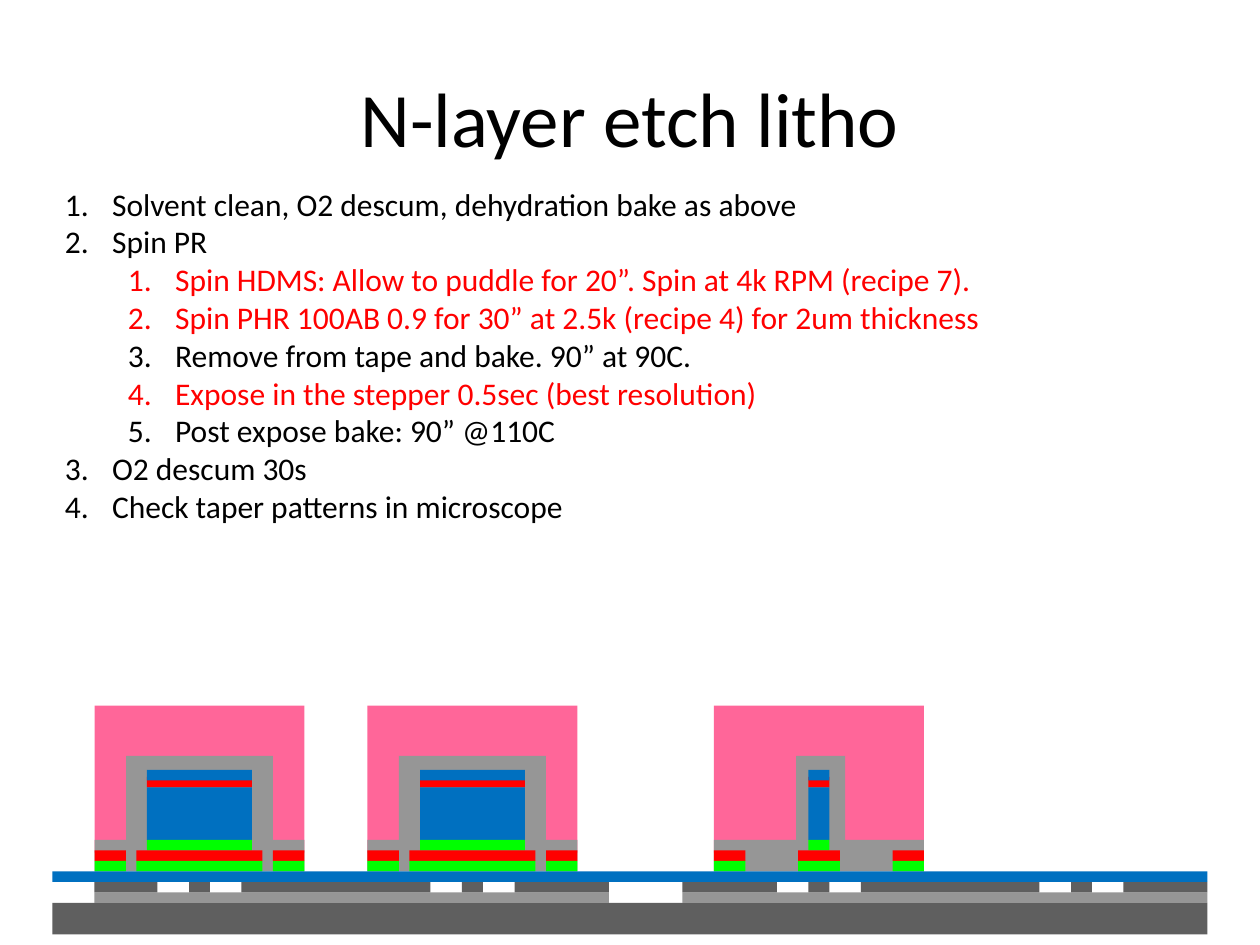
from dataclasses import dataclass

from lxml.etree import SubElement
from pptx import Presentation
from pptx.dml.color import RGBColor
from pptx.enum.shapes import MSO_SHAPE
from pptx.enum.text import MSO_ANCHOR, PP_ALIGN
from pptx.oxml.ns import qn
from pptx.slide import Slide
from pptx.text.text import TextFrame, _Paragraph
from pptx.util import Pt

BLACK = RGBColor(0x00, 0x00, 0x00)
RED = RGBColor(0xFF, 0x00, 0x00)
GREEN = RGBColor(0x00, 0xFF, 0x00)
BLUE = RGBColor(0x00, 0x70, 0xC0)
PINK = RGBColor(0xFF, 0x66, 0x99)
GRAY = RGBColor(0x96, 0x96, 0x96)
DARK_GRAY = RGBColor(0x5F, 0x5F, 0x5F)

FONT = "Calibri"
LAYER = 6
DEVICE_WIDTH = 120
PAD_WIDTH = 18
NUMBER_INDENT = 27
LEVEL_INDENT = 36


@dataclass(frozen=True)
class Device:
    left: float
    mesa_width: float
    contact_width: float
    cladding_width: float
    cladding_shift: float = 0


@dataclass(frozen=True)
class Step:
    text: str
    level: int = 0
    color: RGBColor = BLACK


@dataclass(frozen=True)
class Strip:
    left: float
    width: float


DEVICES = [
    Device(54, 60, 72, 84),
    Device(210, 60, 72, 84),
    Device(408, 12, 24, 28, cladding_shift=1),
]

STEPS = [
    Step("Solvent clean, O2 descum, dehydration bake as above"),
    Step("Spin PR"),
    Step("Spin HDMS: Allow to puddle for 20”. Spin at 4k RPM (recipe 7).", 1, RED),
    Step("Spin PHR 100AB 0.9 for 30” at 2.5k (recipe 4) for 2um thickness", 1, RED),
    Step("Remove from tape and bake. 90” at 90C.", 1),
    Step("Expose in the stepper 0.5sec (best resolution)", 1, RED),
    Step("Post expose bake: 90” @110C", 1),
    Step("O2 descum 30s"),
    Step("Check taper patterns in microscope"),
]

WAFER = Strip(30, 660)
OXIDE = [Strip(54, 294), Strip(390, 300)]
WAVEGUIDES = [
    Strip(54, 36), Strip(108, 12), Strip(138, 108), Strip(264, 12), Strip(294, 54),
    Strip(390, 54), Strip(462, 12), Strip(492, 102), Strip(612, 12), Strip(642, 48),
]


def add_layer(page: Slide, left: float, top: float, width: float,
              height: float, color: RGBColor) -> None:
    box = page.shapes.add_shape(
        MSO_SHAPE.RECTANGLE, Pt(left), Pt(top), Pt(width), Pt(height))
    box.shadow.inherit = False
    box.fill.solid()
    box.fill.fore_color.rgb = color
    box.line.fill.background()


def add_frame(page: Slide, left: float, top: float, width: float,
              height: float) -> TextFrame:
    box = page.shapes.add_textbox(Pt(left), Pt(top), Pt(width), Pt(height))
    box.text_frame.word_wrap = True
    return box.text_frame


def write(para: _Paragraph, text: str, *, size: float,
          color: RGBColor = BLACK, align: PP_ALIGN = PP_ALIGN.LEFT) -> None:
    para.alignment = align
    span = para.add_run()
    span.text = text
    span.font.name = FONT
    span.font.size = Pt(size)
    span.font.color.rgb = color


def number(para: _Paragraph, level: int) -> None:
    para.level = level
    properties = para._p.get_or_add_pPr()
    properties.set("marL", str(Pt(NUMBER_INDENT + LEVEL_INDENT * level)))
    properties.set("indent", str(-Pt(NUMBER_INDENT)))
    SubElement(properties, qn("a:buFont"), typeface=FONT)
    SubElement(properties, qn("a:buAutoNum"), type="arabicPeriod")


def add_title(page: Slide) -> None:
    frame = add_frame(page, 36, 21.6, 648, 90)
    frame.vertical_anchor = MSO_ANCHOR.MIDDLE
    write(frame.paragraphs[0], "N-layer etch litho", size=44, align=PP_ALIGN.CENTER)


def add_steps(page: Slide) -> None:
    frame = add_frame(page, 30, 102, 570, 204)
    for index, step in enumerate(STEPS):
        para = frame.add_paragraph() if index else frame.paragraphs[0]
        number(para, step.level)
        write(para, step.text, size=18, color=step.color)


def add_device(page: Slide, device: Device) -> None:
    def add_centered(top: float, width: float, height: float,
                     color: RGBColor, shift: float = 0) -> None:
        left = device.left + (DEVICE_WIDTH - width) / 2 + shift
        add_layer(page, left, top, width, height, color)

    add_centered(403.2, DEVICE_WIDTH, 84, PINK)
    add_centered(432, device.cladding_width, 55, GRAY, device.cladding_shift)
    add_centered(480, DEVICE_WIDTH, 18, GRAY)
    add_centered(444, device.mesa_width, LAYER, RED)
    add_centered(450, device.mesa_width, 30, BLUE)
    add_centered(440, device.mesa_width, LAYER, BLUE)
    add_centered(480, device.mesa_width, LAYER, GREEN)
    for top, color in ((486, RED), (492, GREEN)):
        add_centered(top, device.contact_width, LAYER, color)
        for offset in (0, DEVICE_WIDTH - PAD_WIDTH):
            add_layer(page, device.left + offset, top, PAD_WIDTH, LAYER, color)


def add_wafer(page: Slide) -> None:
    add_layer(page, WAFER.left, 516, WAFER.width, 18, DARK_GRAY)
    for strips, top, color in ((OXIDE, 510, GRAY), (WAVEGUIDES, 504, DARK_GRAY)):
        for strip in strips:
            add_layer(page, strip.left, top, strip.width, LAYER, color)
    add_layer(page, WAFER.left, 498, WAFER.width, LAYER, BLUE)


def main() -> None:
    deck = Presentation()
    deck.slide_width, deck.slide_height = Pt(720), Pt(540)
    page = deck.slides.add_slide(deck.slide_layouts[6])
    add_title(page)
    add_steps(page)
    for device in DEVICES:
        add_device(page, device)
    add_wafer(page)
    deck.save("out.pptx")


if __name__ == "__main__":
    main()
